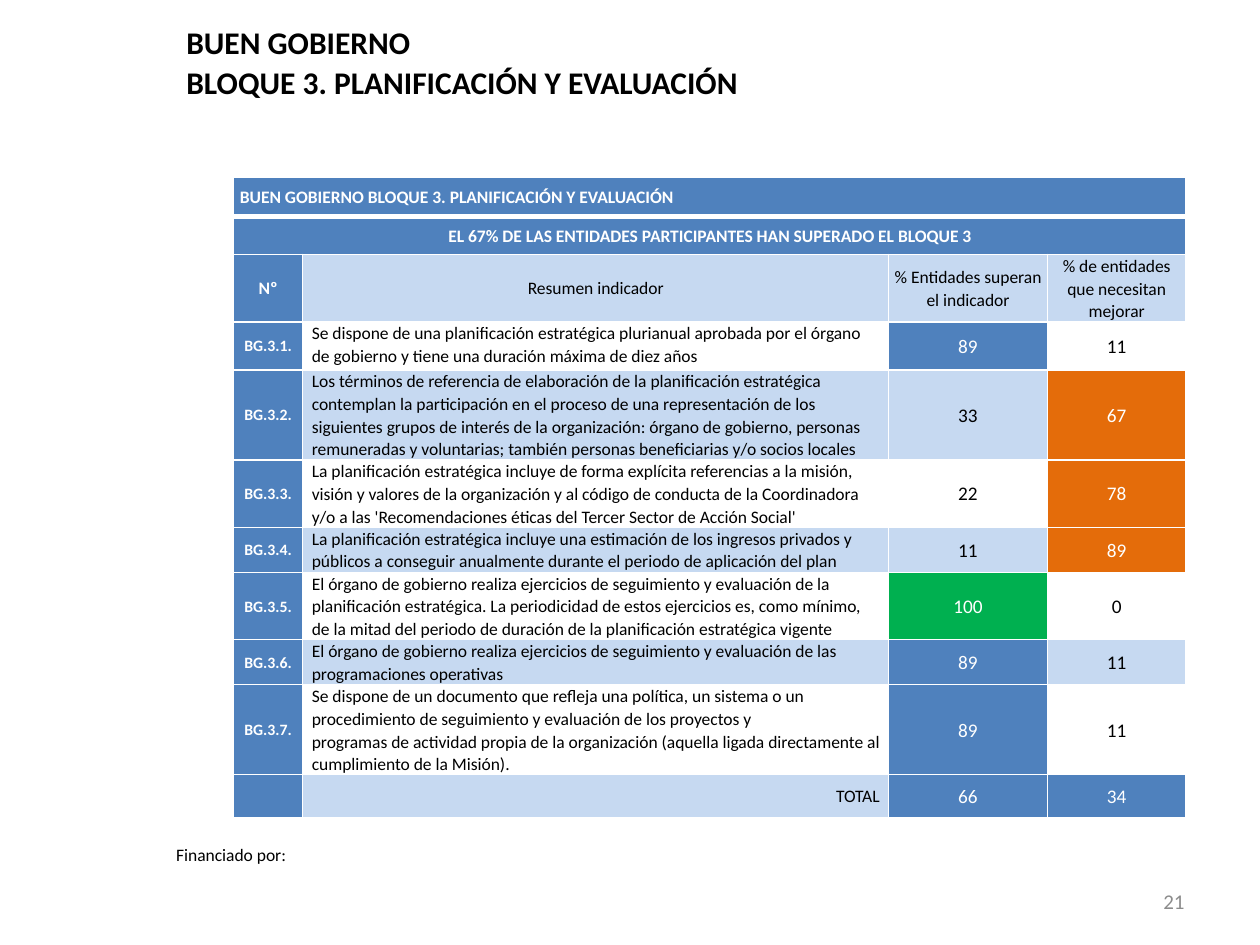
from lxml.etree import SubElement
from pptx import Presentation
from pptx.dml.color import RGBColor
from pptx.enum.text import MSO_ANCHOR, PP_ALIGN
from pptx.oxml.ns import qn
from pptx.util import Pt

BLUE, PALE, ORANGE, GREEN = "4F81BD", "C6D9F1", "E46C0A", "00B050"
WHITE, BLACK, GREY = "FFFFFF", "000000", "8C8C8C"
LEFT, CENTER, RIGHT = PP_ALIGN.LEFT, PP_ALIGN.CENTER, PP_ALIGN.RIGHT
COLUMNS = [39.6, 334.8, 90.7, 79.2]
ROWS = [22.3, 21.6, 38.6, 27.4, 51.1, 38.5, 25.6, 38.5, 25.6, 51.1, 24.5]
HEADERS = ["Nº", "Resumen indicador", "% Entidades superan el indicador",
           "% de entidades que necesitan mejorar"]
INDICATORS = [
    ("Se dispone de una planificación estratégica plurianual aprobada por el órgano "
     "de gobierno y tiene una duración máxima de diez años", 89, 11),
    ("Los términos de referencia de elaboración de la planificación estratégica "
     "contemplan la participación en el proceso de una representación de los "
     "siguientes grupos de interés de la organización: órgano de gobierno, personas "
     "remuneradas y voluntarias; también personas beneficiarias y/o socios locales", 33, 67),
    ("La planificación estratégica incluye de forma explícita referencias a la misión, "
     "visión y valores de la organización y al código de conducta de la Coordinadora "
     "y/o a las 'Recomendaciones éticas del Tercer Sector de Acción Social'", 22, 78),
    ("La planificación estratégica incluye una estimación de los ingresos privados y "
     "públicos a conseguir anualmente durante el periodo de aplicación del plan", 11, 89),
    ("El órgano de gobierno realiza ejercicios de seguimiento y evaluación de la "
     "planificación estratégica. La periodicidad de estos ejercicios es, como mínimo, "
     "de la mitad del periodo de duración de la planificación estratégica vigente", 100, 0),
    ("El órgano de gobierno realiza ejercicios de seguimiento y evaluación de las "
     "programaciones operativas", 89, 11),
    ("Se dispone de un documento que refleja una política, un sistema o un "
     "procedimiento de seguimiento y evaluación de los proyectos y\n"
     "programas de actividad propia de la organización (aquella ligada directamente "
     "al cumplimiento de la Misión).", 89, 11),
]


def rgb(value):
    """Turn a hex string into a colour."""
    return RGBColor.from_string(value)


class Deck:
    """Hold the style and the current slide."""

    font = "Calibri"
    spacing = 1.07

    def __init__(self, width, height):
        """Open a presentation with one blank slide."""
        self.prs = Presentation()
        self.prs.slide_width, self.prs.slide_height = Pt(width), Pt(height)
        self.s = self.prs.slides.add_slide(self.prs.slide_layouts[6])

    def paragraph(self, p, text, size, color=BLACK, bold=False, align=LEFT, spacing=None):
        """Fill a paragraph with styled text."""
        p.text = text
        p.alignment = align
        p.line_spacing = spacing
        for br in p._p.findall(qn("a:br")):
            SubElement(br, qn("a:rPr"), sz=str(size * 100))
        for r in p.runs:
            for name, value in {"name": self.font, "size": Pt(size), "bold": bold}.items():
                setattr(r.font, name, value)
            r.font.color.rgb = rgb(color)

    def text(self, box, lines, size, anchor=MSO_ANCHOR.TOP, **style):
        """Add a text box with one paragraph per line."""
        tf = self.s.shapes.add_textbox(*map(Pt, box)).text_frame
        tf.word_wrap = True
        tf.vertical_anchor = anchor
        for i, line in enumerate(lines):
            p = tf.add_paragraph() if i else tf.paragraphs[0]
            self.paragraph(p, line, size, **style)

    def table(self, left, top, columns, rows):
        """Add a plain table with the given column widths and row heights."""
        self.grid = self.s.shapes.add_table(
            len(rows), len(columns), Pt(left), Pt(top), Pt(sum(columns)), Pt(sum(rows))).table
        self.grid.first_row = self.grid.horz_banding = False
        for column, width in zip(self.grid.columns, columns):
            column.width = Pt(width)
        for row, height in zip(self.grid.rows, rows):
            row.height = Pt(height)

    def border(self, cell, bottom):
        """Draw white borders round a cell."""
        tcPr = cell._tc.get_or_add_tcPr()
        for side, width in {"L": 1, "R": 1, "T": 1, "B": bottom}.items():
            ln = SubElement(tcPr, qn(f"a:ln{side}"), w=str(Pt(width)))
            SubElement(SubElement(ln, qn("a:solidFill")), qn("a:srgbClr"), val=WHITE)

    def cell(self, row, col, text, fill, size=10, inset=5.2, left=None,
             anchor=MSO_ANCHOR.MIDDLE, bottom=1, **style):
        """Style one table cell and set its text."""
        cell = self.grid.cell(row, col)
        self.border(cell, bottom)
        cell.fill.solid()
        cell.fill.fore_color.rgb = rgb(fill)
        form = {"margin_left": Pt(inset if left is None else left), "margin_right": Pt(inset),
                "margin_top": 0, "margin_bottom": 0, "vertical_anchor": anchor}
        for name, value in form.items():
            setattr(cell, name, value)
        if text:
            self.paragraph(cell.text_frame.paragraphs[0], text, size, spacing=self.spacing, **style)

    def banner(self, row, text, bottom=1, **style):
        """Merge a row into one blue heading."""
        last = len(self.grid.columns) - 1
        self.grid.cell(row, 0).merge(self.grid.cell(row, last))
        self.cell(row, 0, text, BLUE, inset=1.4, bottom=bottom, color=WHITE, bold=True, **style)
        for col in range(1, last + 1):
            self.cell(row, col, "", BLUE, bottom=bottom)

    def value(self, row, col, number, fill, band):
        """Set a percentage, in white when its fill stands out from the band."""
        self.cell(row, col, str(number), fill, size=11, align=CENTER,
                  color=BLACK if fill == band else WHITE)


def main():
    """Build the slide."""
    deck = Deck(720, 540)
    deck.text((516, 500.4, 168, 28.8), ["21"], 12, MSO_ANCHOR.MIDDLE, color=GREY, align=RIGHT)
    deck.text((93.6, 478.8, 143.3, 19.4), ["Financiado por:"], 10)

    deck.table(133.4, 101.5, COLUMNS, ROWS)
    deck.banner(0, "BUEN GOBIERNO BLOQUE 3. PLANIFICACIÓN Y EVALUACIÓN", left=3.7, bottom=3)
    deck.banner(1, "EL 67% DE LAS ENTIDADES PARTICIPANTES HAN SUPERADO EL BLOQUE 3", align=CENTER)
    for col, header in enumerate(HEADERS):
        first = col == 0
        deck.cell(2, col, header, BLUE if first else PALE, inset=1.4, align=CENTER,
                  color=WHITE if first else BLACK, bold=first)

    for i, (summary, passed, pending) in enumerate(INDICATORS):
        row, band = i + 3, PALE if i % 2 else WHITE
        deck.cell(row, 0, f"BG.3.{i + 1}.", BLUE, size=9, color=WHITE, bold=True, align=CENTER)
        deck.cell(row, 1, summary, band, anchor=MSO_ANCHOR.TOP)
        deck.value(row, 2, passed, GREEN if passed == 100 else BLUE if passed > 50 else band, band)
        deck.value(row, 3, pending, ORANGE if pending > 50 else band, band)

    total = len(ROWS) - 1
    deck.cell(total, 0, "", BLUE)
    deck.cell(total, 1, "TOTAL", PALE, align=RIGHT)
    deck.value(total, 2, 66, BLUE, PALE)
    deck.value(total, 3, 34, BLUE, PALE)

    deck.text((99.4, 7.9, 465.1, 54), ["BUEN GOBIERNO", "BLOQUE 3. PLANIFICACIÓN Y EVALUACIÓN"],
              18, bold=True, spacing=deck.spacing)
    deck.prs.save("out.pptx")


if __name__ == "__main__":
    main()
